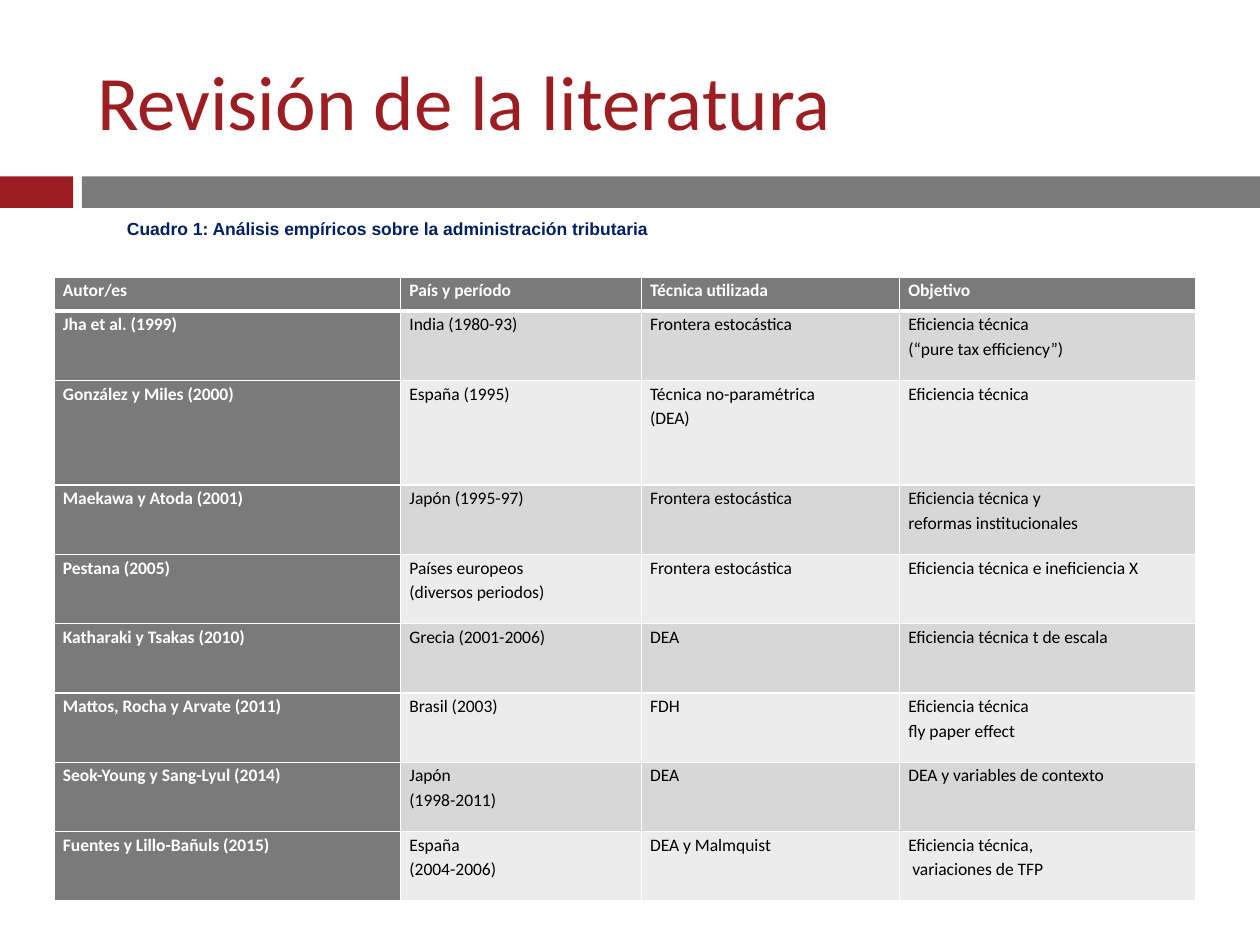
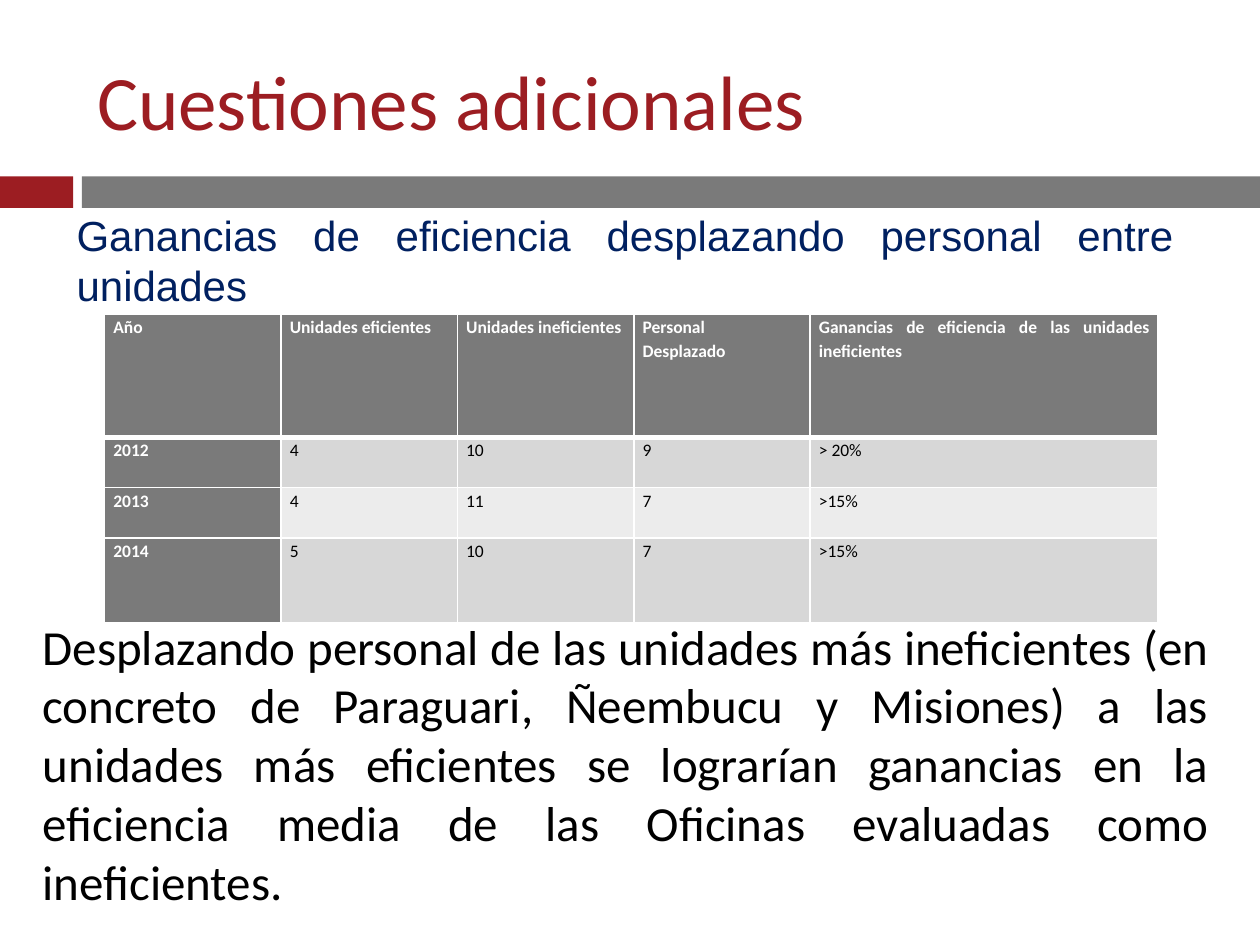
import pptx
import pptx.dml.color
import pptx.enum.shapes
import pptx.enum.text
import pptx.oxml
import pptx.oxml.ns
import pptx.util

Inches = pptx.util.Inches
Pt = pptx.util.Pt
RGBColor = pptx.dml.color.RGBColor
ALIGN = pptx.enum.text.PP_ALIGN
ANCHOR = pptx.enum.text.MSO_ANCHOR

RED = RGBColor(0x9C, 0x1D, 0x22)
GRAY = RGBColor(0x7A, 0x7A, 0x7A)
ROW_DARK = RGBColor(0xD7, 0xD7, 0xD7)
ROW_LIGHT = RGBColor(0xEC, 0xEC, 0xEC)
NAVY = RGBColor(0x00, 0x20, 0x60)
BLACK = RGBColor(0x00, 0x00, 0x00)
WHITE = RGBColor(0xFF, 0xFF, 0xFF)

TITLE_ONLY_LAYOUT = 5

STUDIES = [
    ["Autor/es", "País y período", "Técnica utilizada", "Objetivo"],
    ["Jha et al. (1999)", "India (1980-93)", "Frontera estocástica",
     "Eficiencia técnica\n(“pure tax efficiency”)"],
    ["González y Miles (2000)", "España (1995)", "Técnica no-paramétrica\n(DEA)",
     "Eficiencia técnica"],
    ["Maekawa y Atoda (2001)", "Japón (1995-97)", "Frontera estocástica",
     "Eficiencia técnica y\nreformas institucionales"],
    ["Pestana (2005)", "Países europeos\n(diversos periodos)", "Frontera estocástica",
     "Eficiencia técnica e ineficiencia X"],
    ["Katharaki y Tsakas (2010)", "Grecia (2001-2006)", "DEA",
     "Eficiencia técnica t de escala"],
    ["Mattos, Rocha y Arvate (2011)", "Brasil (2003)", "FDH",
     "Eficiencia técnica\nfly paper effect"],
    ["Seok-Young y Sang-Lyul (2014)", "Japón\n(1998-2011)", "DEA",
     "DEA y variables de contexto"],
    ["Fuentes y Lillo-Bañuls (2015)", "España\n(2004-2006)", "DEA y Malmquist",
     "Eficiencia técnica,\n variaciones de TFP"],
]

GAINS = [
    ["Año", "Unidades eficientes", "Unidades ineficientes", "Personal\nDesplazado",
     "Ganancias de eficiencia de las unidades ineficientes"],
    ["2012", "4", "10", "9", "> 20%"],
    ["2013", "4", "11", "7", ">15%"],
    ["2014", "5", "10", "7", ">15%"],
]


class Deck:
    def __init__(self):
        self.presentation = pptx.Presentation()
        self.presentation.slide_width = Inches(10)
        self.presentation.slide_height = Inches(7.5)
        self.slide = None

    def add_slide(self, title):
        layout = self.presentation.slide_layouts[TITLE_ONLY_LAYOUT]
        self.slide = self.presentation.slides.add_slide(layout)
        self.add_band(0, 0.58, RED)
        self.add_band(0.65, 9.35, GRAY)
        shape = self.slide.shapes.title
        shape.left, shape.top = Inches(0.67), Inches(0.25)
        shape.width, shape.height = Inches(8.92), Inches(1.08)
        text_frame = shape.text_frame
        text_frame.text = title
        text_frame.auto_size = pptx.enum.text.MSO_AUTO_SIZE.NONE
        text_frame.vertical_anchor = ANCHOR.MIDDLE
        self.format_text(text_frame, 44, RED, alignment=ALIGN.LEFT)

    def add_band(self, left, width, color):
        shape = self.slide.shapes.add_shape(
            pptx.enum.shapes.MSO_SHAPE.RECTANGLE,
            Inches(left), Inches(1.4), Inches(width), Inches(0.25))
        shape.shadow.inherit = False
        shape.fill.solid()
        shape.fill.fore_color.rgb = color
        shape.line.fill.background()

    def add_text(self, text, left, top, width, height, size, color,
                 font="Calibri", bold=False, alignment=ALIGN.JUSTIFY, top_margin=0.05):
        shape = self.slide.shapes.add_textbox(
            Inches(left), Inches(top), Inches(width), Inches(height))
        text_frame = shape.text_frame
        text_frame.word_wrap = True
        text_frame.margin_top = Inches(top_margin)
        text_frame.text = text
        self.format_text(text_frame, size, color, font, bold, alignment)

    def add_table(self, rows, left, top, widths, heights):
        table = self.slide.shapes.add_table(
            len(rows), len(widths), Inches(left), Inches(top),
            Inches(sum(widths)), Inches(sum(heights))).table
        for column, width in zip(table.columns, widths):
            column.width = Inches(width)
        for row, height in zip(table.rows, heights):
            row.height = Inches(height)
        for row_index, row in enumerate(rows):
            for column_index, text in enumerate(row):
                self.fill_cell(table.cell(row_index, column_index), text,
                               row_index, column_index)

    def fill_cell(self, cell, text, row_index, column_index):
        is_heading = row_index == 0 or column_index == 0
        band = ROW_DARK if row_index % 2 else ROW_LIGHT
        self.add_borders(cell, top=3 if row_index == 1 else 1,
                         bottom=3 if row_index == 0 else 1)
        cell.fill.solid()
        cell.fill.fore_color.rgb = GRAY if is_heading else band
        cell.margin_left = cell.margin_right = Inches(0.07)
        cell.margin_top = cell.margin_bottom = 0
        cell.text_frame.text = text
        self.format_text(cell.text_frame, 10, WHITE if is_heading else BLACK,
                         bold=is_heading, alignment=ALIGN.JUSTIFY, line_spacing=1.15)

    @staticmethod
    def add_borders(cell, top, bottom):
        """Draw white cell edges; must run before the cell is filled."""
        properties = cell._tc.get_or_add_tcPr()
        for side, points in (("L", 1), ("R", 1), ("T", top), ("B", bottom)):
            properties.append(pptx.oxml.parse_xml(
                f'<a:ln{side} {pptx.oxml.ns.nsdecls("a")} w="{Pt(points)}">'
                f'<a:solidFill><a:srgbClr val="{WHITE}"/></a:solidFill></a:ln{side}>'))

    @staticmethod
    def format_text(text_frame, size, color, font="Calibri", bold=False,
                    alignment=ALIGN.LEFT, line_spacing=1.0):
        for paragraph in text_frame.paragraphs:
            paragraph.alignment = alignment
            paragraph.line_spacing = line_spacing
            for run in paragraph.runs:
                run.font.name = font
                run.font.size = Pt(size)
                run.font.bold = bold
                run.font.color.rgb = color


def main():
    deck = Deck()

    deck.add_slide("Revisión de la literatura")
    deck.add_table(STUDIES, 0.43, 2.2, [2.75, 1.91, 2.05, 2.35],
                   [0.27, 0.55, 0.83] + [0.55] * 6)
    deck.add_text("Cuadro 1: Análisis empíricos sobre la administración tributaria",
                  0.91, 1.7, 8.5, 0.5, 10, NAVY, "Arial", bold=True,
                  alignment=ALIGN.LEFT, top_margin=0.03)

    deck.add_slide("Cuestiones adicionales")
    deck.add_table(GAINS, 0.83, 2.49, [1.4] * 4 + [2.76], [0.98, 0.4, 0.4, 0.67])
    deck.add_text("Ganancias de eficiencia desplazando personal entre unidades",
                  0.51, 1.58, 8.9, 1.08, 24, NAVY, "Arial", top_margin=0.08)
    deck.add_text("Desplazando personal de las unidades más ineficientes (en concreto de "
                  "Paraguari, Ñeembucu y Misiones) a las unidades más eficientes se "
                  "lograrían ganancias en la eficiencia media de las Oficinas evaluadas "
                  "como ineficientes.",
                  0.24, 4.84, 9.45, 2.46, 28, BLACK)

    deck.presentation.save("out.pptx")


if __name__ == "__main__":
    main()
